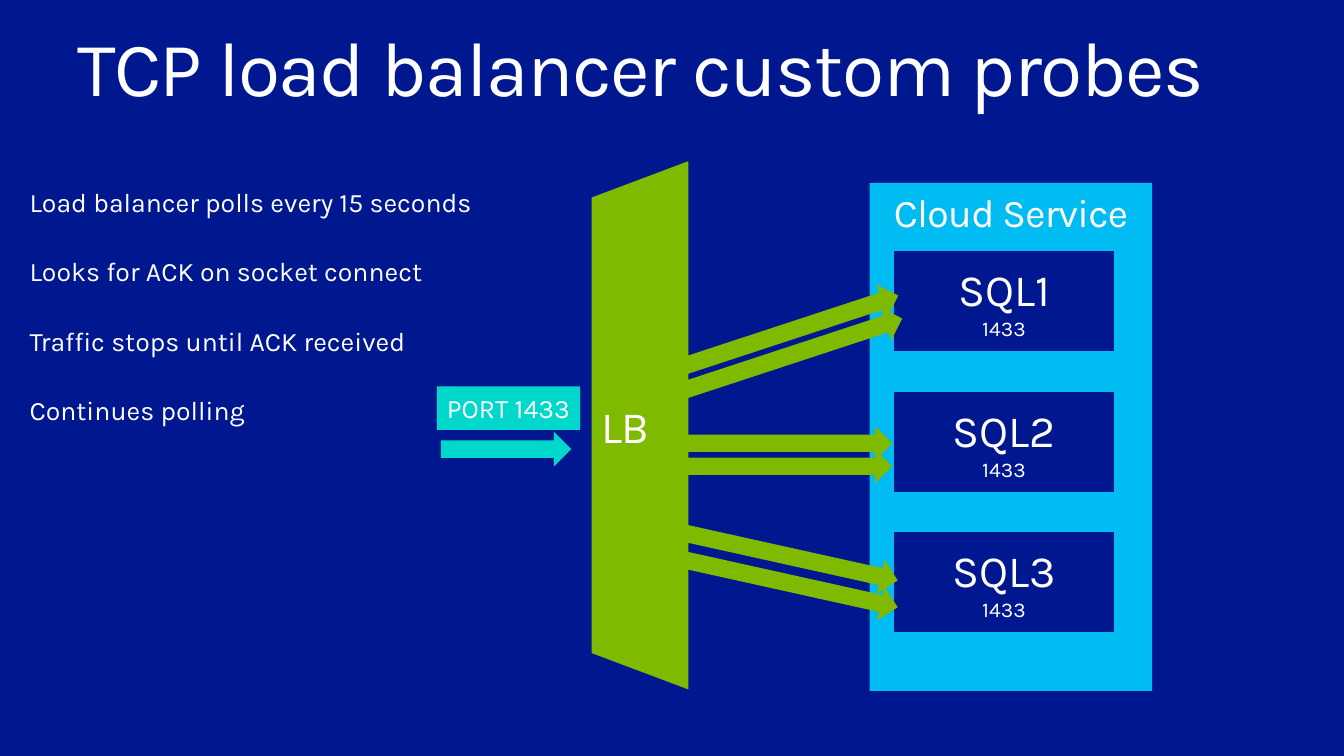
from dataclasses import dataclass

from pptx import Presentation
from pptx.dml.color import RGBColor
from pptx.enum.shapes import MSO_SHAPE
from pptx.enum.text import MSO_ANCHOR, PP_ALIGN
from pptx.util import Cm, Pt


@dataclass(frozen=True)
class Theme:
    """Colours, font and type sizes of the slide."""
    navy: str = "00188F"
    sky: str = "00BCF2"
    green: str = "7FBA00"
    teal: str = "00D8CC"
    white: str = "FFFFFF"
    font: str = "Karla"
    title: float = 56.1
    name: float = 32.6
    head: float = 28.6
    body: float = 19.4
    port: float = 15.3


THEME = Theme()
POINTS = [
    "Load balancer polls every 15 seconds",
    "Looks for ACK on socket connect",
    "Traffic stops until ACK received",
    "Continues polling",
]
ROUTES = [
    (17.17, 8.1, 6.07, -18.2, 0.1, 0.59),
    (17.32, 10.95, 5.61, 0, 0, 0.59),
    (17.3, 13.84, 5.84, 12.5, 0, 0.69),
]


def assign(item, values):
    """Set each attribute named in values."""
    for key, value in values.items():
        setattr(item, key, value)


def write(shape, lines, anchor=MSO_ANCHOR.MIDDLE, pad=0.13, wrap=True, spc=0, **style):
    """Fill a shape with (text, size) lines."""
    frame = shape.text_frame
    side, edge = pad if isinstance(pad, tuple) else (pad, pad)
    assign(frame, {
        "word_wrap": wrap, "vertical_anchor": anchor,
        "margin_left": Cm(side), "margin_right": Cm(side),
        "margin_top": Cm(edge), "margin_bottom": Cm(edge),
    })
    for spot, (text, size) in enumerate(lines):
        para = frame.add_paragraph() if spot else frame.paragraphs[0]
        assign(para, {"alignment": PP_ALIGN.CENTER, **style})
        run = para.add_run()
        run.text = text
        assign(run.font, {"name": THEME.font, "size": Pt(size)})
        run.font.color.rgb = RGBColor.from_string(THEME.white)
        if spc:
            run.font._element.set("spc", str(spc))


def block(slide, kind, box, fill, line=None, turn=0):
    """Add a filled preset shape."""
    shape = slide.shapes.add_shape(kind, *map(Cm, box))
    shape.shadow.inherit = False
    shape.rotation = turn
    shape.fill.solid()
    shape.fill.fore_color.rgb = RGBColor.from_string(fill)
    if line:
        shape.line.color.rgb = RGBColor.from_string(line)
        shape.line.width = Pt(0.75)
    else:
        shape.line.fill.background()
    return shape


def label(slide, box, lines, **style):
    """Add a left-aligned text box."""
    shape = slide.shapes.add_textbox(*map(Cm, box))
    write(shape, lines, anchor=MSO_ANCHOR.TOP, alignment=PP_ALIGN.LEFT,
          line_spacing=0.9, **style)


def cloud(slide):
    """Draw the cloud service and its servers."""
    panel = block(slide, MSO_SHAPE.RECTANGLE, (22.35, 4.7, 7.26, 13.06), THEME.sky)
    write(panel, [("Cloud Service", THEME.head)], anchor=MSO_ANCHOR.TOP, spc=-50)
    for row in range(3):
        box = (22.96, 6.45 + 3.61 * row, 5.69, 2.59)
        node = block(slide, MSO_SHAPE.RECTANGLE, box, THEME.navy, THEME.sky)
        write(node, [(f"SQL{row + 1}", THEME.name), ("1433", THEME.port)])


def balancer(slide):
    """Draw the load balancer and its inbound port."""
    gate = block(slide, MSO_SHAPE.TRAPEZOID, (9.68, 9.7, 13.54, 2.46),
                 THEME.green, THEME.green, 270)
    gate.adjustments[0] = 0.376
    write(gate, [("LB", THEME.name)], spc=-50, alignment=PP_ALIGN.LEFT)
    gate.text_frame._txBody.bodyPr.set("vert", "vert")
    block(slide, MSO_SHAPE.RIGHT_ARROW, (11.33, 11.1, 3.35, 0.89), THEME.teal)
    port = block(slide, MSO_SHAPE.RECTANGLE, (11.23, 9.93, 3.68, 1.12), THEME.teal)
    write(port, [("PORT 1433", THEME.body)], wrap=False)


def routes(slide):
    """Draw a pair of arrows to each server."""
    for left, top, width, turn, shift, drop in ROUTES:
        for step in range(2):
            box = (left + shift * step, top + drop * step, width, 0.89)
            block(slide, MSO_SHAPE.RIGHT_ARROW, box, THEME.green, turn=turn)


def main():
    """Build and save the slide."""
    deck = Presentation()
    assign(deck, {"slide_width": Cm(34.54), "slide_height": Cm(19.43)})
    slide = deck.slides.add_slide(deck.slide_layouts[6])
    fill = slide.background.fill
    fill.solid()
    fill.fore_color.rgb = RGBColor.from_string(THEME.navy)
    label(slide, (1.47, 0.64, 31.6, 2.13),
          [("TCP load balancer custom probes", THEME.title)], pad=(0.51, 0.13), spc=-100)
    cloud(slide)
    balancer(slide)
    label(slide, (0.76, 4.88, 11.53, 7.2), [(text, THEME.body) for text in POINTS],
          pad=0, wrap=False, space_after=Pt(29.4))
    routes(slide)
    deck.save("out.pptx")


if __name__ == "__main__":
    main()
